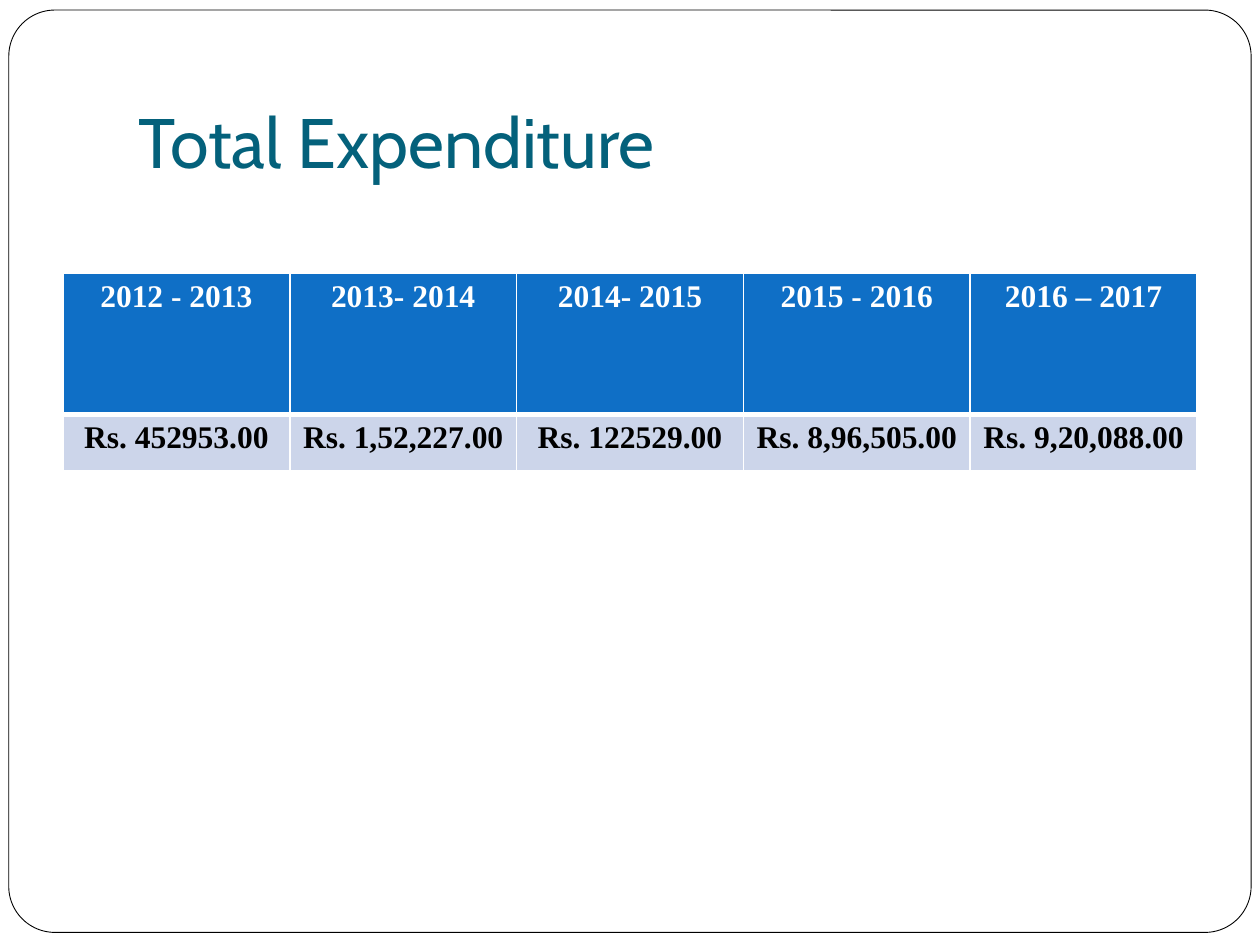
from dataclasses import dataclass

from lxml.etree import SubElement
from pptx import Presentation
from pptx.dml.color import RGBColor
from pptx.enum.shapes import MSO_SHAPE
from pptx.enum.text import MSO_ANCHOR, MSO_AUTO_SIZE, PP_ALIGN
from pptx.oxml.ns import qn
from pptx.util import Inches, Pt


@dataclass(frozen=True)
class Theme:
    white: str = "FFFFFF"
    black: str = "000000"
    title: str = "04617B"
    header: str = "0F6FC6"
    band: str = "CCD5EA"
    title_font: str = "Cabin"
    table_font: str = "Times New Roman"
    title_size: int = 40
    table_size: int = 18
    frame_line: float = 0.5
    rule: int = 1
    header_rule: int = 3


THEME = Theme()
YEARS = ["2012 - 2013", "2013- 2014", "2014- 2015", "2015 - 2016", "2016 – 2017"]
AMOUNTS = ["Rs. 452953.00", "Rs. 1,52,227.00", "Rs. 122529.00",
           "Rs. 8,96,505.00", "Rs. 9,20,088.00"]


def rgb(value):
    return RGBColor.from_string(value)


def set_attributes(target, values):
    for name, value in values.items():
        setattr(target, name, value)


def write(p, text, color, align, **font):
    p.alignment = align
    r = p.add_run()
    r.text = text
    set_attributes(r.font, font)
    r.font.color.rgb = rgb(color)


def set_borders(cell, widths):
    """Draw white cell borders; call before the fill, which follows them in XML."""
    tc_pr = cell._tc.get_or_add_tcPr()
    for side, width in widths.items():
        line = SubElement(tc_pr, qn(f"a:ln{side}"), w=str(Pt(width)))
        fill = SubElement(line, qn("a:solidFill"))
        SubElement(fill, qn("a:srgbClr"), val=THEME.white)


def add_frame(s, left, top, width, height):
    frame = s.shapes.add_shape(MSO_SHAPE.ROUNDED_RECTANGLE, left, top, width, height)
    frame.adjustments[0] = 0.05
    frame.shadow.inherit = False
    frame.fill.solid()
    frame.fill.fore_color.rgb = rgb(THEME.white)
    frame.line.color.rgb = rgb(THEME.black)
    frame.line.width = Pt(THEME.frame_line)
    s.shapes._spTree.insert(2, frame._element)  # behind the title


def add_title(s, left, top, width, height):
    title = s.shapes.title
    set_attributes(title, dict(left=left, top=top, width=width, height=height))
    tf = title.text_frame
    set_attributes(tf, dict(
        word_wrap=True, auto_size=MSO_AUTO_SIZE.NONE,
        vertical_anchor=MSO_ANCHOR.BOTTOM,
        margin_left=Inches(0.1), margin_right=Inches(0.1),
        margin_top=Inches(0.05), margin_bottom=Inches(0.1)))
    write(tf.paragraphs[0], "Total Expenditure", THEME.title, PP_ALIGN.LEFT,
          name=THEME.title_font, size=Pt(THEME.title_size))


def add_expenditure_table(s, left, top, width, header_height, row_height):
    table = s.shapes.add_table(2, len(YEARS), left, top, width,
                               header_height + row_height).table
    rows = [
        (YEARS, header_height, THEME.header, THEME.white,
         dict(T=THEME.rule, B=THEME.header_rule)),
        (AMOUNTS, row_height, THEME.band, THEME.black,
         dict(T=THEME.header_rule, B=THEME.rule)),
    ]
    for row, (texts, height, fill, color, edges) in zip(table.rows, rows):
        row.height = height
        for cell, text in zip(row.cells, texts):
            set_borders(cell, dict(L=THEME.rule, R=THEME.rule) | edges)
            cell.fill.solid()
            cell.fill.fore_color.rgb = rgb(fill)
            write(cell.text_frame.paragraphs[0], text, color, PP_ALIGN.CENTER,
                  name=THEME.table_font, size=Pt(THEME.table_size), bold=True)


def main():
    prs = Presentation()
    prs.slide_width, prs.slide_height = Inches(10), Inches(7.5)
    s = prs.slides.add_slide(prs.slide_layouts[5])
    add_frame(s, Inches(0.07), Inches(0.08), Inches(9.86), Inches(7.32))
    add_title(s, Inches(1), Inches(0.3), Inches(8.5), Inches(1.25))
    add_expenditure_table(s, Inches(0.5), Inches(2.17), Inches(9),
                          Inches(1.12), Inches(0.45))
    prs.save("out.pptx")


if __name__ == "__main__":
    main()
